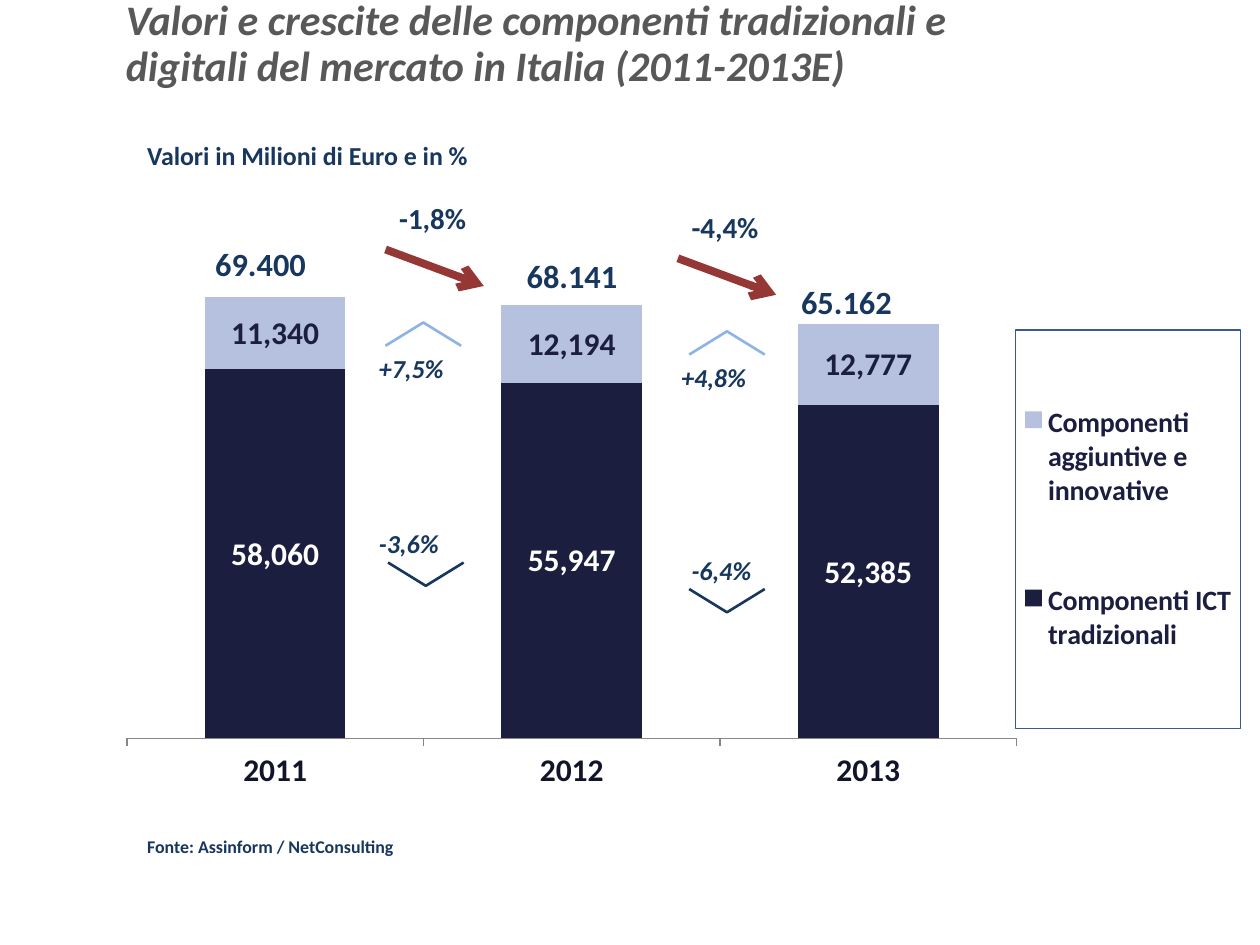
from lxml.etree import SubElement
from pptx import Presentation
from pptx.chart.data import CategoryChartData
from pptx.dml.color import RGBColor
from pptx.enum.chart import XL_CHART_TYPE, XL_LEGEND_POSITION, XL_TICK_MARK
from pptx.enum.shapes import MSO_CONNECTOR
from pptx.enum.text import MSO_ANCHOR, MSO_AUTO_SIZE, PP_ALIGN
from pptx.oxml import parse_xml
from pptx.oxml.ns import nsdecls, qn
from pptx.util import Inches, Pt

NAVY, BLUE, LIGHT, SKY, RED = "1B1E3E", "17375E", "B5C1DF", "8EB4E3", "953735"


def color(value):
    return RGBColor.from_string(value)


class Deck:
    """Style and current slide, on a grid of 100 columns by 75 rows."""

    font = "Calibri"

    def __init__(self):
        self.prs = Presentation()
        self.prs.slide_width, self.prs.slide_height = Inches(10), Inches(7.5)
        self.s = self.prs.slides.add_slide(self.prs.slide_layouts[6])

    def grid(self, *units):
        return [int(u * self.prs.slide_width / 100) for u in units]

    def style(self, font, size, fill, italic=False):
        font.name, font.size, font.bold, font.italic = self.font, Pt(size), True, italic
        font.color.rgb = color(fill)

    def text(self, box, text, size, fill=BLUE, italic=False, align=PP_ALIGN.LEFT,
             anchor=MSO_ANCHOR.TOP, spacing=1.0):
        tf = self.s.shapes.add_textbox(*self.grid(*box)).text_frame
        tf.word_wrap, tf.vertical_anchor = True, anchor
        tf.auto_size = MSO_AUTO_SIZE.SHAPE_TO_FIT_TEXT
        tf.text = text
        p = tf.paragraphs[0]
        p.alignment, p.line_spacing = align, spacing
        self.style(p.runs[0].font, size, fill, italic)

    def arrow(self, start, end):
        sp = self.s.shapes.add_connector(MSO_CONNECTOR.STRAIGHT, *self.grid(*start, *end))
        sp.line.color.rgb, sp.line.width = color(RED), Pt(4.5)
        SubElement(sp.line._get_or_add_ln(), qn("a:tailEnd"), type="arrow")
        SubElement(sp._element.spPr, qn("a:effectLst"))

    def chevron(self, col, row, apex, fill):
        points = [self.grid(col, row), self.grid(col + 3, apex), self.grid(col + 6, row)]
        builder = self.s.shapes.build_freeform(*points[0])
        builder.add_line_segments(points[1:], close=False)
        sp = builder.convert_to_shape()
        sp.shadow.inherit = False
        sp.fill.background()
        sp.line.color.rgb, sp.line.width = color(fill), Pt(1.5)

    def layout(self, x, y, w, h, target=""):
        return parse_xml(
            f'<c:layout {nsdecls("c")}><c:manualLayout>{target}<c:xMode val="edge"/>'
            f'<c:yMode val="edge"/><c:x val="{x}"/><c:y val="{y}"/><c:w val="{w}"/>'
            f'<c:h val="{h}"/></c:manualLayout></c:layout>')

    def chart(self, box, cats, series):
        data = CategoryChartData(number_format="#,##0")
        data.categories = cats
        for name, values, _, _ in series:
            data.add_series(name, values)
        chart = self.s.shapes.add_chart(
            XL_CHART_TYPE.COLUMN_STACKED, *self.grid(*box), data).chart
        chart.has_title = False
        chart.font.name, chart.font.size = self.font, Pt(18)
        plot = chart.plots[0]
        plot.gap_width, plot.overlap, plot.vary_by_categories = 111, 100, False
        for ser, (_, _, fill, label) in zip(plot.series, series):
            ser.format.fill.solid()
            ser.format.fill.fore_color.rgb = color(fill)
            labels = ser.data_labels
            labels.show_value = True
            labels.number_format, labels.number_format_is_linked = "#,##0", False
            self.style(labels.font, 18, label)
        axis = chart.category_axis
        axis.major_tick_mark = XL_TICK_MARK.OUTSIDE
        axis.format.line.color.rgb = color("878787")
        self.style(axis.tick_labels.font, 18, "121429")
        axis = chart.value_axis
        axis.minimum_scale, axis.maximum_scale = 0, 80000
        axis.has_major_gridlines = axis.visible = False
        area = chart._chartSpace.chart.plotArea
        for old in area.findall(qn("c:layout")):
            area.remove(old)
        area.insert(0, self.layout(0.015, 0.03, 0.77, 0.843,
                                   '<c:layoutTarget val="inner"/>'))
        self.legend(chart)

    def legend(self, chart):
        chart.has_legend = True
        legend = chart.legend
        legend.position, legend.include_in_layout = XL_LEGEND_POSITION.RIGHT, False
        self.style(legend.font, 16, NAVY)
        el = legend._element
        for old in el.findall(qn("c:layout")):
            el.remove(old)
        el.find(qn("c:legendPos")).addnext(self.layout(0.784, 0.196, 0.195, 0.66))
        el.find(qn("c:overlay")).addnext(parse_xml(
            f'<c:spPr {nsdecls("c", "a")}><a:ln w="9525"><a:solidFill>'
            '<a:srgbClr val="3A5A95"/></a:solidFill></a:ln></c:spPr>'))


def main():
    d = Deck()
    d.text((9, -0.6, 74.1, 8.3),
           "Valori e crescite delle componenti tradizionali e digitali del mercato "
           "in Italia (2011-2013E)", 24, "585858", True,
           anchor=MSO_ANCHOR.MIDDLE, spacing=0.9)
    d.text((10.7, 10.6, 36.3, 3.5), "Valori in Milioni di Euro e in %", 14.8)
    d.chart((8.7, 16.8, 91.7, 47.9), ("2011", "2012", "2013"), (
        ("Componenti ICT tradizionali", (58060, 55947, 52385), NAVY, "FFFFFF"),
        ("Componenti aggiuntive e innovative", (11340, 12194, 12777), LIGHT, NAVY)))
    for box, total, align in (((16.1, 18.9, 12, 4.1), "69.400", PP_ALIGN.LEFT),
                              ((39.1, 19.8, 12.6, 4.1), "68.141", PP_ALIGN.CENTER),
                              ((62.6, 21.9, 11.3, 4.1), "65.162", PP_ALIGN.LEFT)):
        d.text(box, total, 18.5, align=align)
    for col, row, change in ((30.7, 15.4, "-1,8%"), (53.9, 16.1, "-4,4%")):
        d.text((col, row, 10, 3.8), change, 16.6)
        d.arrow((col - 0.1, row + 4.4), (col + 7.7, row + 7.3))
    for col, row, change in ((29.1, 27.5, "+7,5%"), (53.1, 28.2, "+4,8%"),
                             (29.1, 41.4, "-3,6%"), (53.9, 43.5, "-6,4%")):
        d.text((col, row, 9, 3.5), change, 14.8, italic=True)
    for col, row, apex, fill in ((30.6, 27.45, 25.6, SKY), (54.7, 28.15, 26.3, SKY),
                                 (30.8, 44.65, 46.5, BLUE), (54.7, 46.75, 48.6, BLUE)):
        d.chevron(col, row, apex, fill)
    d.text((10.7, 65.8, 55.7, 2.7), "Fonte: Assinform / NetConsulting", 10.2)
    d.prs.save("out.pptx")


if __name__ == "__main__":
    main()
